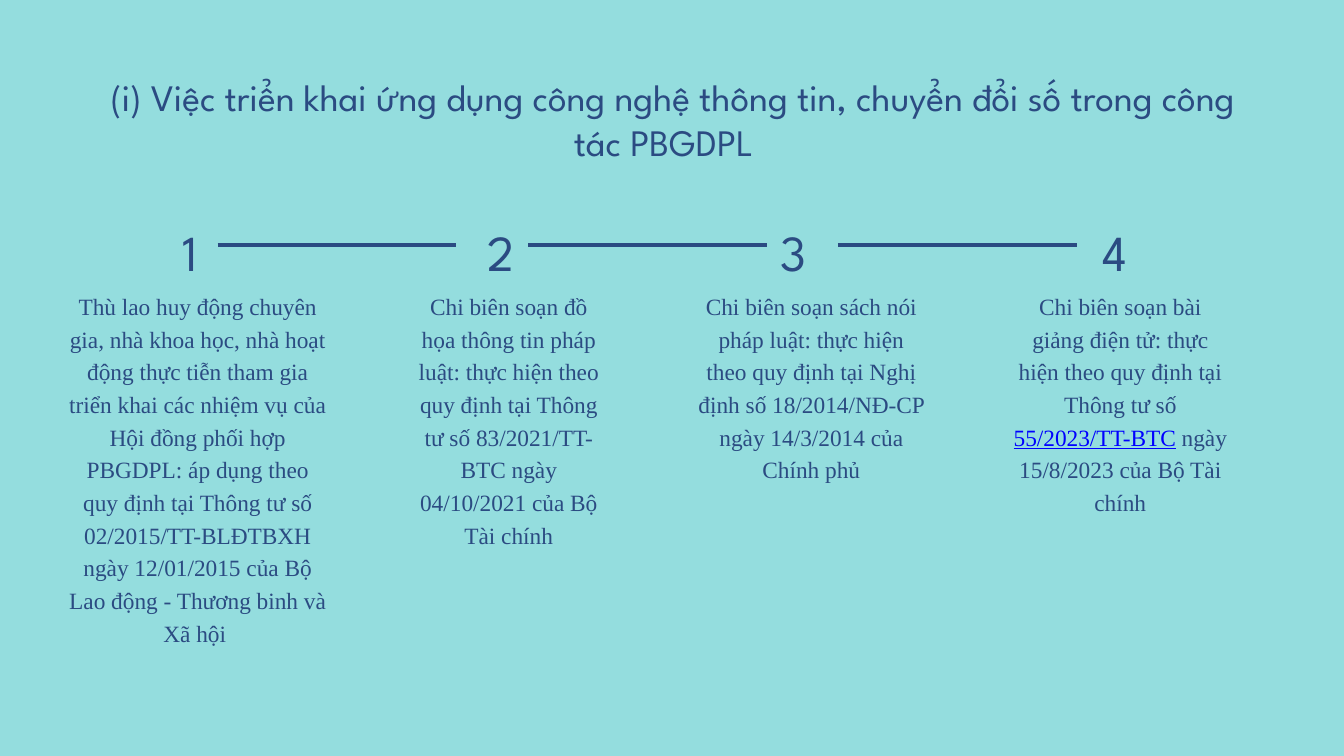
from lxml import etree
from pptx import Presentation
from pptx.dml.color import RGBColor as Rgb
from pptx.enum.shapes import MSO_CONNECTOR as Conn
from pptx.enum.text import MSO_AUTO_SIZE as Auto, PP_ALIGN as Align
from pptx.oxml.ns import qn
from pptx.util import Cm, Pt

HUE = {"back": "94DDDE", "ink": "2B4B82", "link": "0000FF"}
HEAD, BODY = "League Spartan", "Times New Roman"

TITLE = (" (i) Việc triển khai ứng dụng công nghệ thông tin, "
         "chuyển đổi số trong công tác PBGDPL ")
# Each step: digit left, text left, text width, text height, text runs.
# Every second run is a reference, in the link colour.
STEPS = [
    (6.17, 2.57, 9.8, 14.68,
     ["Thù lao huy động chuyên gia, nhà khoa học, nhà hoạt động thực tiễn "
      "tham gia triển khai các nhiệm vụ của Hội đồng phối hợp PBGDPL: áp dụng "
      "theo quy định tại Thông tư số 02/2015/TT-BLĐTBXH ngày 12/01/2015 của "
      "Bộ Lao động - Thương binh và Xã hội "]),
    (17.9, 15.65, 7.16, 9.83,
     ["Chi biên soạn đồ họa thông tin pháp luật: thực hiện theo quy định tại "
      "Thông tư số 83/2021/TT-BTC ngày 04/10/2021 của Bộ Tài chính"]),
    (28.98, 26.37, 8.59, 7.39,
     ["Chi biên soạn sách nói pháp luật: thực hiện theo quy định tại Nghị "
      "định số 18/2014/NĐ-CP ngày 14/3/2014 của Chính phủ"]),
    (41.12, 38.23, 8.23, 8.61,
     ["Chi biên soạn bài giảng điện tử: thực hiện theo quy định tại Thông tư số ",
      "55/2023/TT-BTC", " ngày 15/8/2023 của Bộ Tài chính"]),
]
WIDE, TALL = 2.06, 2.51           # digit box
FIRST, PITCH, SPAN = 8.23, 11.72, 9.02  # rules between digits


def color(name):
    return Rgb.from_string(HUE[name])


def add_text(slide, box, runs, face, size, lead, auto=Auto.SHAPE_TO_FIT_TEXT):
    """Add centred text with an exact line height, given a box in cm."""
    shape = slide.shapes.add_textbox(*map(Cm, box))
    frame = shape.text_frame
    frame.margin_left = frame.margin_right = 0
    frame.margin_top = frame.margin_bottom = 0
    frame.word_wrap, frame.auto_size = True, auto
    para = frame.paragraphs[0]
    para.alignment, para.line_spacing = Align.CENTER, Pt(lead)
    para.font.name, para.font.size = face, Pt(size)
    for i, text in enumerate(runs):
        run = para.add_run()
        run.text = text
        run.font.name, run.font.size = face, Pt(size)
        run.font.color.rgb = color("link" if i % 2 else "ink")
        if i % 2:
            run.font.underline = True
    return shape


def add_digit(slide, left, top, num):
    box = (left, top, WIDE, TALL)
    shape = add_text(slide, box, [str(num)], HEAD, 54, 75.5, Auto.NONE)
    run = shape.text_frame.paragraphs[0].runs[0]
    run.font._element.set("spc", "920")
    return shape


def add_rule(slide, left, y):
    line = slide.shapes.add_connector(
        Conn.STRAIGHT, Cm(left), Cm(y), Cm(left + SPAN), Cm(y))
    line.line.color.rgb = color("ink")
    line.line.width = Pt(3.68)
    etree.SubElement(line._element.spPr, qn("a:effectLst"))
    return line


def add_steps(slide, top):
    """Add the numbered steps and the rules that lead from one to the next."""
    digits = []
    for num, (spot, left, width, height, runs) in enumerate(STEPS, 1):
        digits.append(add_digit(slide, spot, top, num))
        add_text(slide, (left, top + 2.87, width, height), runs, BODY, 25, 35)
    rules = [add_rule(slide, FIRST + i * PITCH, top + TALL / 2)
             for i in range(len(STEPS) - 1)]
    rules[0].begin_connect(digits[0], 3)
    rules[1].begin_connect(digits[1], 3)
    rules[1].end_connect(digits[2], 1)


def main():
    deck = Presentation()
    deck.slide_width, deck.slide_height = Cm(50.8), Cm(28.58)
    slide = deck.slides.add_slide(deck.slide_layouts[6])
    slide.background.fill.solid()
    slide.background.fill.fore_color.rgb = color("back")
    add_text(slide, (2.84, 2.82, 44.83, 3.35), [TITLE], HEAD, 40, 48)
    add_steps(slide, 8)
    deck.save("out.pptx")


if __name__ == "__main__":
    main()
